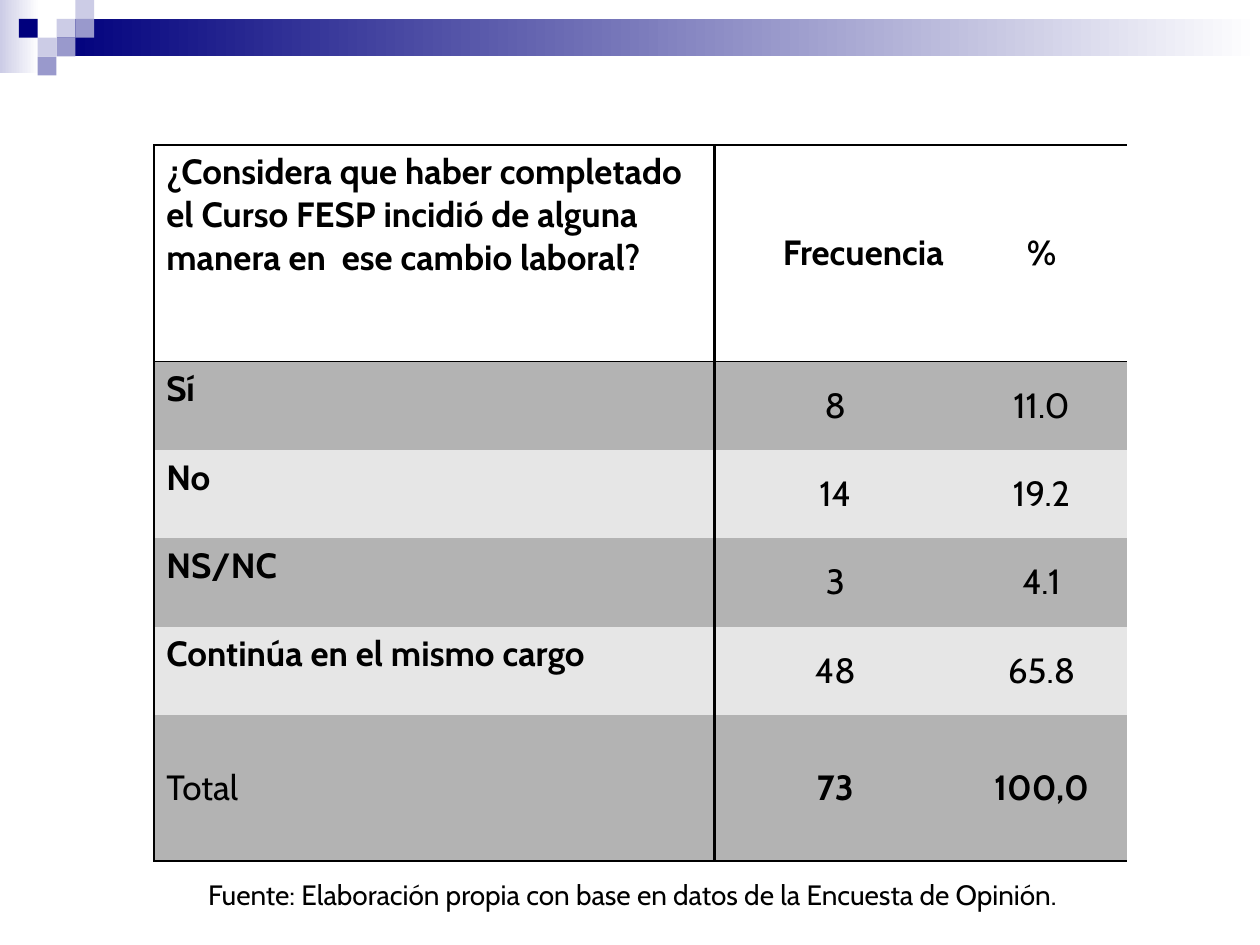
from pptx import Presentation
from pptx.dml.color import RGBColor
from pptx.enum.shapes import MSO_SHAPE as Shape
from pptx.enum.text import MSO_ANCHOR as Anchor, PP_ALIGN as Align
from pptx.oxml import parse_xml
from pptx.oxml.ns import nsdecls
from pptx.util import Cm, Pt

FONT = "Cabin"
BLACK, WHITE, NAVY, LILAC, VIOLET = "000000", "FFFFFF", "00007D", "CCCCE6", "9999CC"
DARK, LIGHT = "B3B3B3", "E6E6E6"

HEAD = ("¿Considera que haber completado el Curso FESP incidió de alguna "
        "manera en  ese cambio laboral?", "Frecuencia", "%")
BODY = [
    ("Sí", "8", "11.0"),
    ("No", "14", "19.2"),
    ("NS/NC", "3", "4.1"),
    ("Continúa en el mismo cargo", "48", "65.8"),
]
TOTAL = ("Total", "73", "100,0")
SOURCE = "Fuente: Elaboración propia con base en datos de la Encuesta de Opinión."

WIDTHS = [11.3, 4.88, 3.43]
HEIGHTS = [4.37] + [1.78] * len(BODY) + [2.95]
LEFT, TOP = 3.1, 2.92

UNIT = 0.38
BANDS = [(0, 0, 0.79, 1.47, LILAC), (1.14, UNIT, 24.26, 0.76, NAVY)]
TILES = [(3, 1, LILAC), (4, 0, LILAC), (4, 1, VIOLET), (2, 2, LILAC),
         (1, 1, NAVY), (3, 2, VIOLET), (2, 3, VIOLET)]


def tint(code):
    return RGBColor.from_string(code)


def block(x, y, w, h, color, fade=None):
    box = slide.shapes.add_shape(Shape.RECTANGLE, Cm(x), Cm(y), Cm(w), Cm(h))
    box.shadow.inherit = False
    box.line.fill.background()
    if fade:
        box.fill.gradient()
        box.fill.gradient_angle = 0
        for stop, code in zip(box.fill.gradient_stops, (color, fade)):
            stop.color.rgb = tint(code)
            stop.position = 0 if code == color else 1
    else:
        box.fill.solid()
        box.fill.fore_color.rgb = tint(color)


def write(frame, text, size=20, bold=False, align=Align.LEFT):
    para = frame.paragraphs[0]
    para.alignment = align
    run = para.add_run()
    run.text = text
    font = run.font
    font.name, font.size, font.bold = FONT, Pt(size), bold
    font.color.rgb = tint(BLACK)


def edge(cell, side, width):
    paint = f'<a:solidFill><a:srgbClr val="{BLACK}"/></a:solidFill>' if width else "<a:noFill/>"
    cell._tc.get_or_add_tcPr().append(parse_xml(
        f'<a:ln{side} {nsdecls("a")} w="{Pt(width)}">{paint}</a:ln{side}>'))


def fill_table(rows):
    last = len(rows) - 1
    grid = slide.shapes.add_table(
        len(rows), len(WIDTHS), Cm(LEFT), Cm(TOP), Cm(sum(WIDTHS)), Cm(sum(HEIGHTS))).table
    for col, width in zip(grid.columns, WIDTHS):
        col.width = Cm(width)
    for r, row in enumerate(rows):
        grid.rows[r].height = Cm(HEIGHTS[r])
        for c, text in enumerate(row):
            cell = grid.cell(r, c)
            edge(cell, "L", (1, 2, 0)[c])
            edge(cell, "R", (2, 0, 0)[c])
            edge(cell, "T", 1 if r < 2 else 0)
            edge(cell, "B", 1 if r in (0, last) else 0)
            cell.fill.solid()
            cell.fill.fore_color.rgb = tint(WHITE if r == 0 else DARK if r % 2 else LIGHT)
            cell.vertical_anchor = Anchor.MIDDLE if c or r == last else Anchor.TOP
            align = Align.LEFT if c == 0 else Align.RIGHT if (r, c) == (0, 1) else Align.CENTER
            bold = r == 0 or (c > 0) == (r == last)
            write(cell.text_frame, text, bold=bold, align=align)


deck = Presentation()
deck.slide_width, deck.slide_height = Cm(25.4), Cm(19.05)
slide = deck.slides.add_slide(deck.slide_layouts[6])

for band in BANDS:
    block(*band, fade=WHITE)
for col, row, color in TILES:
    block(col * UNIT, row * UNIT, UNIT, UNIT, color)

fill_table([HEAD, *BODY, TOTAL])

note = slide.shapes.add_textbox(Cm(3.38), Cm(17.55), Cm(18.75), Cm(0.94)).text_frame
note.word_wrap = False
note.vertical_anchor = Anchor.MIDDLE
write(note, SOURCE, size=16, align=Align.CENTER)

deck.save("out.pptx")
